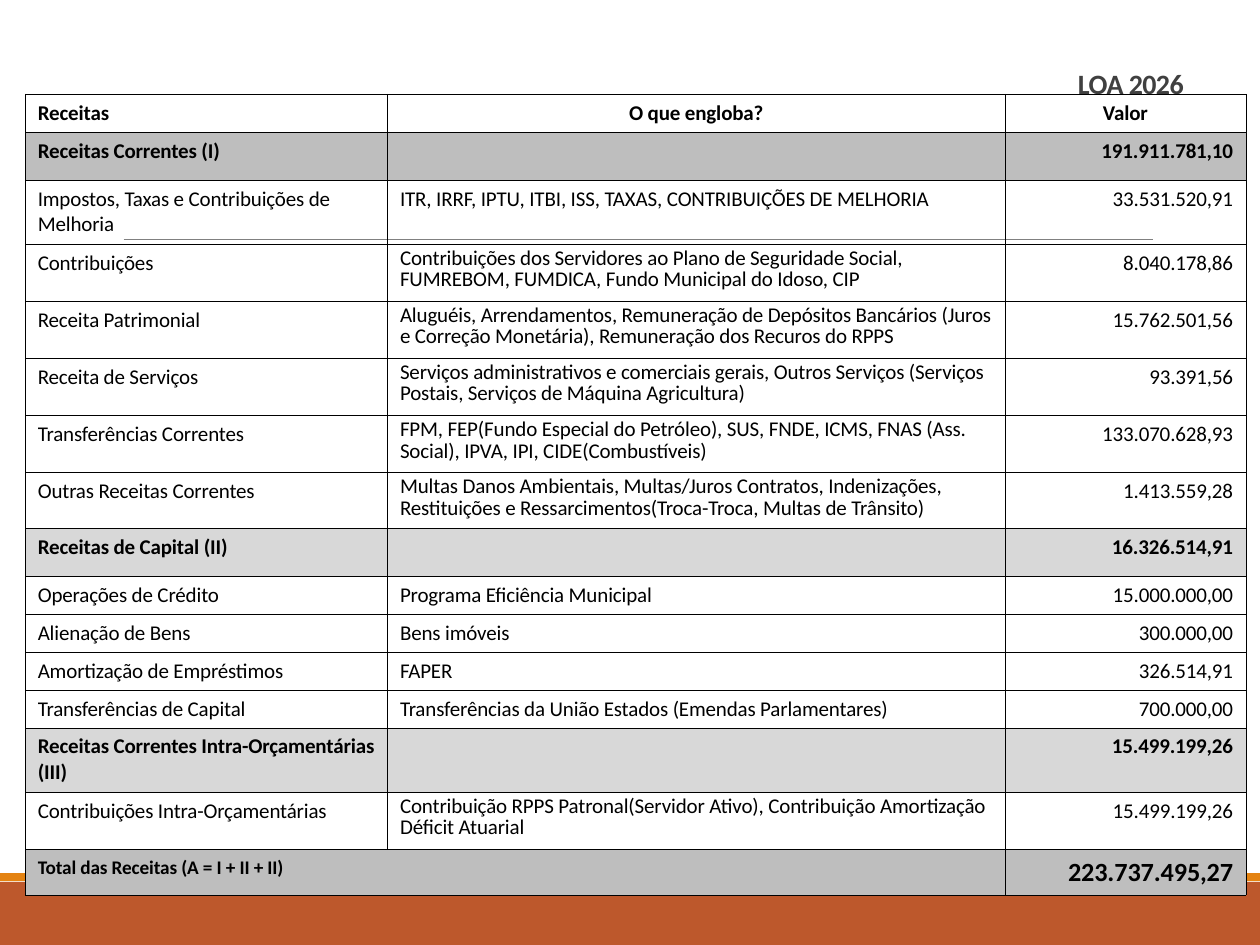
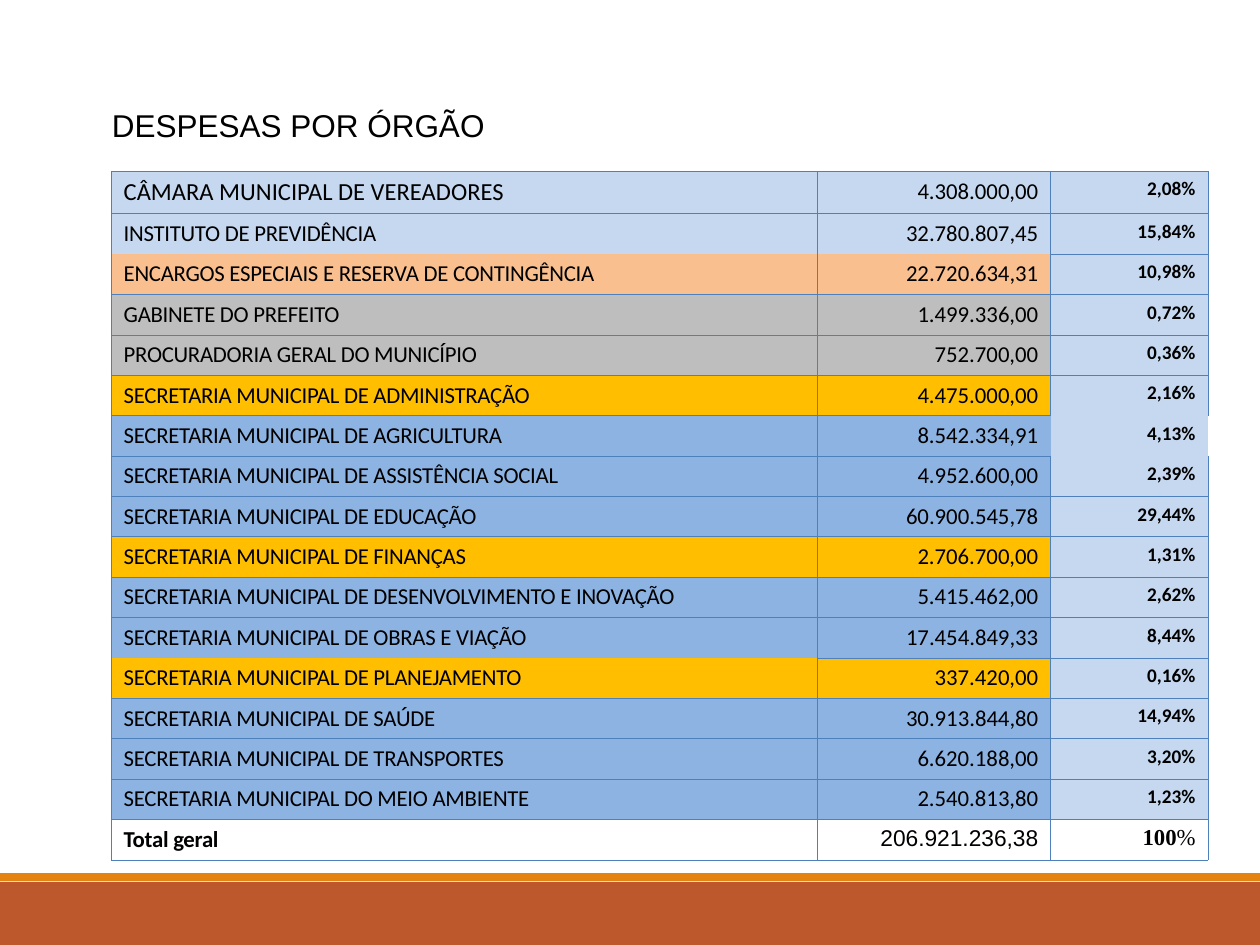
from lxml import etree
from pptx import Presentation
from pptx import util as u
from pptx.dml.color import RGBColor
from pptx.enum import shapes, text
from pptx.oxml.ns import qn

Pt = u.Pt
LEFT, CENTER, RIGHT = text.PP_ALIGN.LEFT, text.PP_ALIGN.CENTER, text.PP_ALIGN.RIGHT

# Shared look
WIDTH, HEIGHT = 720, 540
BODY_FONT = "Calibri"
BLACK, WHITE, TITLE_GRAY, RULE_GRAY = "000000", "FFFFFF", "404040", "808080"
RUST, ORANGE = "BD582C", "E48312"
DARK_GRAY, LIGHT_GRAY = "BEBEBE", "D8D8D8"
PALE_BLUE, BLUE, PEACH, GOLD, EDGE_BLUE = "C5D8F0", "8DB3E2", "F9BF8F", "FFBF00", "4E80BC"
SIDES = {"l": "a:lnL", "r": "a:lnR", "t": "a:lnT", "b": "a:lnB"}

# Revenue rows: name, coverage, value, height, fill
REVENUE = [
    ("Receitas", "O que engloba?", "Valor", 21.7, None),
    ("Receitas Correntes (I)", "", "191.911.781,10", 27.4, DARK_GRAY),
    ("Impostos, Taxas e Contribuições de Melhoria",
     "ITR, IRRF, IPTU, ITBI, ISS, TAXAS, CONTRIBUIÇÕES DE MELHORIA",
     "33.531.520,91", 36.6, None),
    ("Contribuições",
     "Contribuições dos Servidores ao Plano de Seguridade Social, "
     "FUMREBOM, FUMDICA, Fundo Municipal do Idoso, CIP",
     "8.040.178,86", 32.6, None),
    ("Receita Patrimonial",
     "Aluguéis, Arrendamentos, Remuneração de Depósitos Bancários "
     "(Juros e Correção Monetária), Remuneração dos Recuros do RPPS",
     "15.762.501,56", 32.6, None),
    ("Receita de Serviços",
     "Serviços administrativos e comerciais gerais, Outros Serviços "
     "(Serviços Postais, Serviços de Máquina Agricultura)",
     "93.391,56", 32.6, None),
    ("Transferências Correntes",
     "FPM, FEP(Fundo Especial do Petróleo), SUS, FNDE, ICMS, FNAS "
     "(Ass. Social), IPVA, IPI, CIDE(Combustíveis)",
     "133.070.628,93", 32.6, None),
    ("Outras Receitas Correntes",
     "Multas Danos Ambientais, Multas/Juros Contratos, Indenizações, "
     "Restituições e Ressarcimentos(Troca-Troca, Multas de Trânsito)",
     "1.413.559,28", 32, None),
    ("Receitas de Capital (II)", "", "16.326.514,91", 27.4, LIGHT_GRAY),
    ("Operações de Crédito", "Programa Eficiência Municipal", "15.000.000,00", 21.7, None),
    ("Alienação de Bens", "Bens imóveis", "300.000,00", 21.7, None),
    ("Amortização de Empréstimos", "FAPER", "326.514,91", 21.7, None),
    ("Transferências de Capital", "Transferências da União Estados (Emendas Parlamentares)",
     "700.000,00", 21.7, None),
    ("Receitas Correntes Intra-Orçamentárias (III)", "", "15.499.199,26", 36.6, LIGHT_GRAY),
    ("Contribuições Intra-Orçamentárias",
     "Contribuição RPPS Patronal(Servidor Ativo), Contribuição Amortização Déficit Atuarial",
     "15.499.199,26", 33.1, WHITE),
    ("Total das Receitas (A = I + II + II)", "", "223.737.495,27", 25.7, DARK_GRAY),
]

# Expense rows: body, value, share, fill
EXPENSES = [
    ("CÂMARA MUNICIPAL DE VEREADORES", "4.308.000,00", "2,08%", PALE_BLUE),
    ("INSTITUTO DE PREVIDÊNCIA", "32.780.807,45", "15,84%", PALE_BLUE),
    ("ENCARGOS ESPECIAIS E RESERVA DE CONTINGÊNCIA", "22.720.634,31", "10,98%", PEACH),
    ("GABINETE DO PREFEITO", "1.499.336,00", "0,72%", DARK_GRAY),
    ("PROCURADORIA GERAL DO MUNICÍPIO", "752.700,00", "0,36%", DARK_GRAY),
    ("SECRETARIA MUNICIPAL DE ADMINISTRAÇÃO", "4.475.000,00", "2,16%", GOLD),
    ("SECRETARIA MUNICIPAL DE AGRICULTURA", "8.542.334,91", "4,13%", BLUE),
    ("SECRETARIA MUNICIPAL DE ASSISTÊNCIA SOCIAL", "4.952.600,00", "2,39%", BLUE),
    ("SECRETARIA MUNICIPAL DE EDUCAÇÃO", "60.900.545,78", "29,44%", BLUE),
    ("SECRETARIA MUNICIPAL DE FINANÇAS", "2.706.700,00", "1,31%", GOLD),
    ("SECRETARIA MUNICIPAL DE DESENVOLVIMENTO E INOVAÇÃO", "5.415.462,00", "2,62%", BLUE),
    ("SECRETARIA MUNICIPAL DE OBRAS E VIAÇÃO", "17.454.849,33", "8,44%", BLUE),
    ("SECRETARIA MUNICIPAL DE PLANEJAMENTO", "337.420,00", "0,16%", GOLD),
    ("SECRETARIA MUNICIPAL DE SAÚDE", "30.913.844,80", "14,94%", BLUE),
    ("SECRETARIA MUNICIPAL DE TRANSPORTES", "6.620.188,00", "3,20%", BLUE),
    ("SECRETARIA MUNICIPAL DO MEIO AMBIENTE", "2.540.813,80", "1,23%", BLUE),
    ("Total geral", "206.921.236,38", "100", None),
]
# Sides without a border, by (row, column)
OPEN_SIDES = {
    (1, 0): "b", (1, 1): "b", (2, 0): "t", (2, 1): "t",
    (5, 2): "b", (6, 1): "r", (6, 2): "lrtb", (7, 2): "t",
    (11, 0): "b", (12, 0): "t",
}


def color(hex_code):
    return RGBColor.from_string(hex_code)


def style_run(run, size, bold=False, font=BODY_FONT, ink=BLACK, spacing=0):
    run.font.size, run.font.bold, run.font.name = Pt(size), bold, font
    run.font.color.rgb = color(ink)
    if spacing:
        run.font._element.set("spc", str(round(spacing * 100)))


def write(frame, words, size, align=LEFT, line_spacing=None, **look):
    frame.text = words
    line = frame.paragraphs[0]
    line.alignment = align
    if line_spacing:
        line.line_spacing = line_spacing
    if not words:
        line.font.size = Pt(size)
    for run in line.runs:
        style_run(run, size, **look)


def add_band(slide, top, height, fill):
    band = slide.shapes.add_shape(shapes.MSO_SHAPE.RECTANGLE, 0, Pt(top), Pt(WIDTH), Pt(height))
    band.shadow.inherit = False
    band.fill.solid()
    band.fill.fore_color.rgb = color(fill)
    band.line.fill.background()


def add_rule(slide, left, right, top):
    rule = slide.shapes.add_connector(
        shapes.MSO_CONNECTOR.STRAIGHT, Pt(left), Pt(top), Pt(right), Pt(top))
    rule.line.color.rgb = color(RULE_GRAY)
    rule.line.width = Pt(0.5)
    etree.SubElement(rule._element.spPr, qn("a:effectLst"))


def add_base_slide(deck):
    slide = deck.slides.add_slide(deck.slide_layouts[6])
    add_band(slide, 504, 36, RUST)
    add_band(slide, 499, 4.6, ORANGE)
    add_rule(slide, 70.6, 658.8, 136.8)
    return slide


def add_heading(slide, left, top, width, height, words, size, margins, anchor, **look):
    frame = slide.shapes.add_textbox(Pt(left), Pt(top), Pt(width), Pt(height)).text_frame
    frame.word_wrap = True
    frame.vertical_anchor = anchor
    frame.margin_left = frame.margin_right = Pt(margins[0])
    frame.margin_top = frame.margin_bottom = Pt(margins[1])
    write(frame, words, size, **look)


def add_grid(slide, left, top, widths, heights):
    grid = slide.shapes.add_table(len(heights), len(widths), Pt(left), Pt(top),
                                  Pt(sum(widths)), Pt(sum(heights))).table
    grid.first_row = grid.horz_banding = False
    for column, width in zip(grid.columns, widths):
        column.width = Pt(width)
    for row, height in zip(grid.rows, heights):
        row.height = Pt(height)
    return grid


def paint_cell(cell, fill, edge, open_sides=""):
    props = cell._tc.get_or_add_tcPr()
    for side, tag in SIDES.items():
        border = etree.SubElement(props, qn(tag), w=str(Pt(0.23)))
        if side in open_sides:
            etree.SubElement(border, qn("a:noFill"))
        else:
            ink = etree.SubElement(border, qn("a:solidFill"))
            etree.SubElement(ink, qn("a:srgbClr"), val=edge)
    if fill:
        cell.fill.solid()
        cell.fill.fore_color.rgb = color(fill)
    else:
        cell.fill.background()


def build_revenue(deck):
    slide = add_base_slide(deck)
    add_heading(slide, 65, 0, 614.5, 57, "LOA 2026", 16, (3, 0), text.MSO_ANCHOR.BOTTOM,
                align=RIGHT, bold=True, ink=TITLE_GRAY, spacing=-0.3)
    grid = add_grid(slide, 14.4, 53.7, (207, 353, 137.5), [row[3] for row in REVENUE])
    last = len(REVENUE) - 1
    grid.cell(last, 0).merge(grid.cell(last, 1))
    for r, (name, coverage, value, _, fill) in enumerate(REVENUE):
        header, total = r == 0, r == last
        bold = header or fill in (DARK_GRAY, LIGHT_GRAY)
        cells = [grid.cell(r, c) for c in range(3)]
        for cell in cells:
            paint_cell(cell, fill, BLACK)
        look = {"bold": bold, "spacing": -0.08}
        write(cells[0].text_frame, name, 11 if total else 12, **look)
        if not total:
            two_lines = len(coverage) > 65
            write(cells[1].text_frame, coverage, 12, CENTER if header else LEFT,
                  Pt(12.1) if two_lines else None, **look)
        write(cells[2].text_frame, value, 15 if total else 12, CENTER if header else RIGHT,
              Pt(18.8) if total else None, **look)


def build_expenses(deck):
    slide = add_base_slide(deck)
    last = len(EXPENSES) - 1
    grid = add_grid(slide, 63.5, 97.8, (403.7, 133.2, 90), [24] + [22.86] * last)
    for r, (body, value, share, fill) in enumerate(EXPENSES):
        total = r == last
        cells = [grid.cell(r, c) for c in range(3)]
        for c, cell in enumerate(cells):
            shade = PALE_BLUE if c == 2 and not total else fill
            paint_cell(cell, shade, EDGE_BLUE, OPEN_SIDES.get((r, c), ""))
        write(cells[0].text_frame, body, 14 if r == 0 else 13, bold=total,
              spacing=-0.14 if r else 0)
        write(cells[1].text_frame, value, 13, RIGHT, font="Arial" if total else BODY_FONT)
        write(cells[2].text_frame, share, 13 if total else 11, RIGHT, bold=True,
              font="Times New Roman" if total else BODY_FONT)
    # The total's percent sign is not bold
    percent = grid.cell(last, 2).text_frame.paragraphs[0].add_run()
    percent.text = "%"
    style_run(percent, 13, font="Times New Roman")
    add_heading(slide, 56.9, 56.9, 638, 29, "DESPESAS POR ÓRGÃO", 18, (7.2, 3.6),
                text.MSO_ANCHOR.TOP, font="Arial")


def main():
    deck = Presentation()
    deck.slide_width, deck.slide_height = Pt(WIDTH), Pt(HEIGHT)
    build_revenue(deck)
    build_expenses(deck)
    deck.save("out.pptx")


if __name__ == "__main__":
    main()
